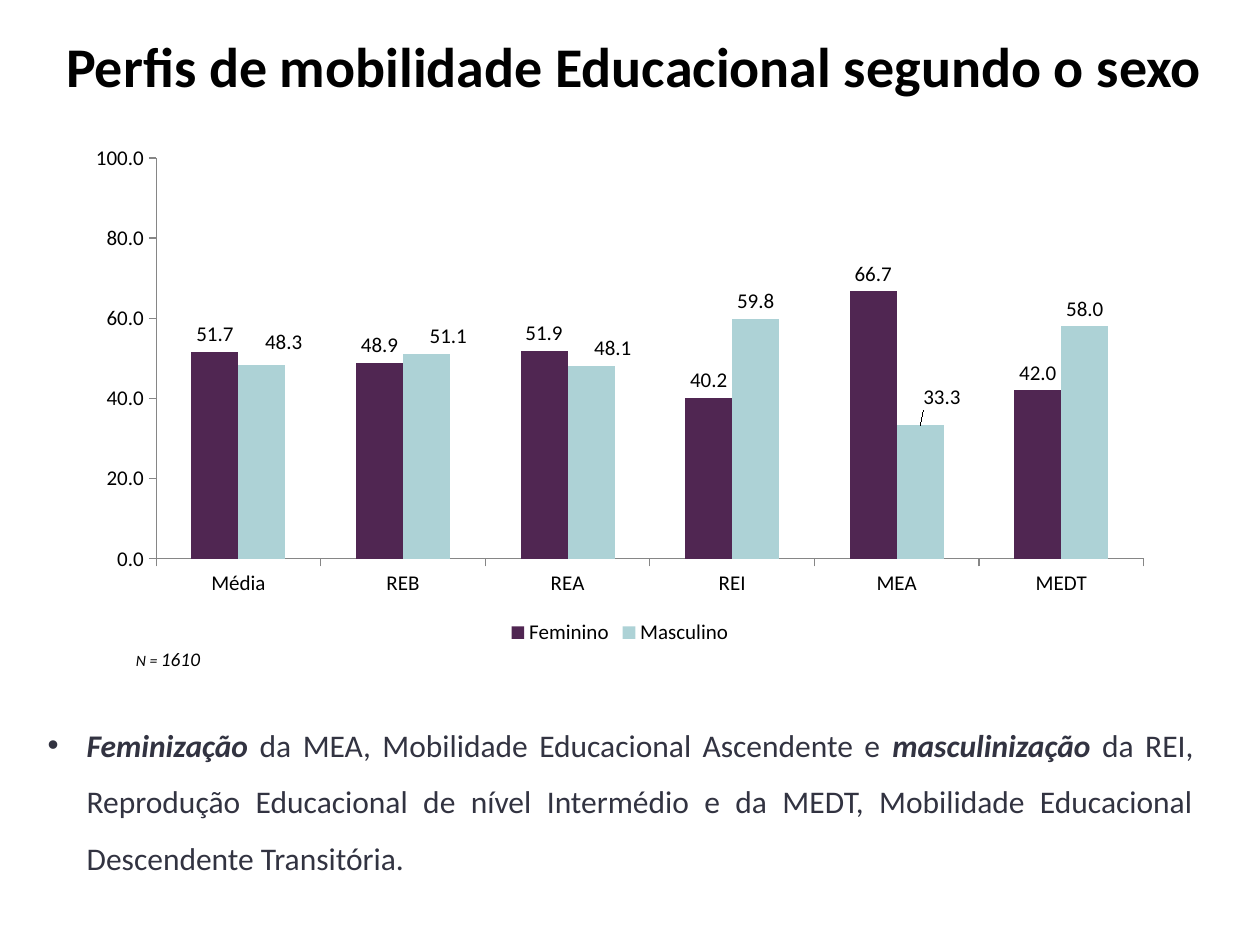
from lxml import etree
from pptx import Presentation
from pptx.chart.data import CategoryChartData
from pptx.dml.color import RGBColor
from pptx.enum.chart import XL_CHART_TYPE, XL_LABEL_POSITION, XL_LEGEND_POSITION, XL_TICK_MARK
from pptx.enum.text import MSO_ANCHOR, PP_ALIGN
from pptx.oxml.ns import qn
from pptx.util import Inches, Pt

COLUMNS = XL_CHART_TYPE.COLUMN_CLUSTERED
OUTSIDE_END = XL_LABEL_POSITION.OUTSIDE_END
BOTTOM = XL_LEGEND_POSITION.BOTTOM
TICK_OUT = XL_TICK_MARK.OUTSIDE
MIDDLE = MSO_ANCHOR.MIDDLE
CENTER, JUSTIFY = PP_ALIGN.CENTER, PP_ALIGN.JUSTIFY

BLACK = RGBColor(0x00, 0x00, 0x00)
SLATE = RGBColor(0x32, 0x33, 0x41)
GRAY = RGBColor(0x86, 0x86, 0x86)
PURPLE = RGBColor(0x50, 0x26, 0x52)
AQUA = RGBColor(0xAD, 0xD2, 0xD6)
FONT = "Calibri"
NUMBER = "###0.0"

CATEGORIES = ["Média", "REB", "REA", "REI", "MEA", "MEDT"]
SERIES = [
    ("Feminino", [51.7, 48.9, 51.9, 40.2, 66.7, 42.0], PURPLE),
    ("Masculino", [48.3, 51.1, 48.1, 59.8, 33.3, 58.0], AQUA),
]
MALE_LABEL_SHIFTS = {0: (0.02, -0.01), 1: (0.02, 0), 2: (0.02, 0), 4: (0.02, -0.02)}


def format_font(font, size, color=BLACK, bold=False, italic=False):
    font.name, font.size = FONT, Pt(size)
    font.bold, font.italic = bold, italic
    font.color.rgb = color


def add_text(p, text, **style):
    r = p.add_run()
    r.text = text
    format_font(r.font, **style)


def place(shape, box):
    shape.left, shape.top, shape.width, shape.height = map(Inches, box)


def add_textbox(s, box):
    tf = s.shapes.add_textbox(*map(Inches, box)).text_frame
    tf.word_wrap = True
    return tf.paragraphs[0]


def manual_layout(**values):
    layout = etree.Element(qn("c:layout"))
    manual = etree.SubElement(layout, qn("c:manualLayout"))
    for tag, value in values.items():
        etree.SubElement(manual, qn(f"c:{tag}")).set("val", str(value))
    return layout


def add_title(s, box):
    title = s.shapes.title
    place(title, box)
    tf = title.text_frame
    tf.vertical_anchor = MIDDLE
    p = tf.paragraphs[0]
    p.alignment = CENTER
    add_text(p, "Perfis de mobilidade Educacional segundo o sexo", size=32, bold=True)


def format_axis(axis):
    axis.has_major_gridlines = False
    axis.major_tick_mark = TICK_OUT
    axis.format.line.color.rgb = GRAY
    format_font(axis.tick_labels.font, 12)


def shift_labels(series, shifts):
    for i, (x, y) in shifts.items():
        label = series.points[i].data_label
        label.position = OUTSIDE_END
        format_font(label.font, 12)
        idx = series._element.xpath(f"c:dLbls/c:dLbl/c:idx[@val='{i}']")[0]
        idx.addnext(manual_layout(x=x, y=y))


def add_profile_chart(s, box):
    data = CategoryChartData(number_format=NUMBER)
    data.categories = CATEGORIES
    for name, values, _ in SERIES:
        data.add_series(name, values)
    chart = s.shapes.add_chart(COLUMNS, *map(Inches, box), data).chart
    chart.has_title = False
    format_font(chart.font, 10)
    chart.has_legend = True
    chart.legend.position = BOTTOM
    chart.legend.include_in_layout = False
    format_font(chart.legend.font, 12)

    format_axis(chart.category_axis)
    values = chart.value_axis
    format_axis(values)
    values.minimum_scale, values.maximum_scale, values.major_unit = 0, 100, 20
    values.tick_labels.number_format = NUMBER
    values.tick_labels.number_format_is_linked = False

    plot = chart.plots[0]
    plot.gap_width, plot.overlap, plot.vary_by_categories = 150, 0, False
    for series, (_, _, color) in zip(plot.series, SERIES):
        series.format.fill.solid()
        series.format.fill.fore_color.rgb = color
        labels = series.data_labels
        labels.show_value = True
        labels.position = OUTSIDE_END
        labels.number_format = NUMBER
        labels.number_format_is_linked = False
        format_font(labels.font, 12)
    shift_labels(plot.series[1], MALE_LABEL_SHIFTS)

    area = chart._chartSpace.xpath("c:chart/c:plotArea")[0]
    for old in area.findall(qn("c:layout")):
        area.remove(old)
    area.insert(0, manual_layout(layoutTarget="inner", xMode="edge", yMode="edge",
                                 x=0.075, y=0.045, w=0.905, h=0.778))


def add_sample_note(s, box):
    p = add_textbox(s, box)
    add_text(p, "N = ", size=9, italic=True)
    add_text(p, "1610", size=11, italic=True)


def add_conclusion(s, box):
    p = add_textbox(s, box)
    p.alignment, p.line_spacing = JUSTIFY, 1.5
    pPr = p._p.get_or_add_pPr()
    pPr.set("marL", str(Inches(0.31)))
    pPr.set("indent", str(Inches(-0.31)))
    etree.SubElement(pPr, qn("a:buFont")).set("typeface", "Arial")
    etree.SubElement(pPr, qn("a:buChar")).set("char", "•")
    for text, strong in [
        ("Feminização ", True),
        ("da MEA, Mobilidade Educacional Ascendente e ", False),
        ("masculinização ", True),
        ("da REI, Reprodução Educacional de nível Intermédio e da MEDT, "
         "Mobilidade Educacional Descendente Transitória.", False),
    ]:
        add_text(p, text, size=18, color=SLATE, bold=strong, italic=strong)


def main():
    prs = Presentation()
    prs.slide_width, prs.slide_height = Inches(10), Inches(7.5)
    s = prs.slides.add_slide(prs.slide_layouts[5])
    add_title(s, (0.35, 0.05, 9.37, 0.94))
    add_profile_chart(s, (0.59, 1.07, 8.66, 4.09))
    add_sample_note(s, (0.98, 5.09, 0.75, 0.29))
    add_conclusion(s, (0.28, 5.56, 9.29, 1.77))
    prs.save("out.pptx")


if __name__ == "__main__":
    main()
